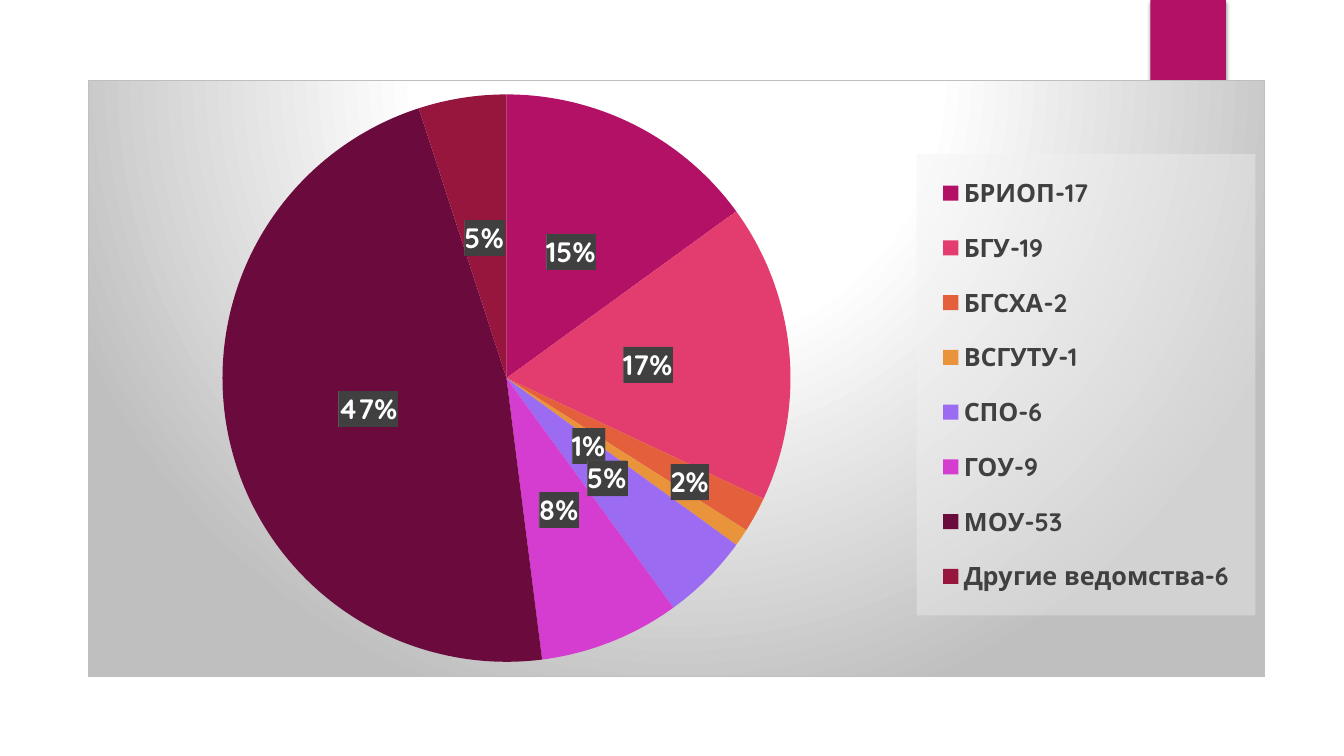
from copy import deepcopy

from pptx import Presentation
from pptx.chart.data import CategoryChartData
from pptx.dml.color import RGBColor
from pptx.enum.chart import XL_CHART_TYPE as Kind
from pptx.enum.chart import XL_LABEL_POSITION as Spot
from pptx.enum.chart import XL_LEGEND_POSITION as Side
from pptx.enum.shapes import MSO_SHAPE as Shape
from pptx.oxml import parse_xml
from pptx.oxml.ns import qn
from pptx.util import Inches, Pt

BLACK = RGBColor(0, 0, 0)
WHITE = RGBColor(0xFF, 0xFF, 0xFF)
GREY = RGBColor(0x40, 0x40, 0x40)
PINK = RGBColor(0xB3, 0x11, 0x66)
FONT = "Quicksand"
SLICES = [
    ("БРИОП-17", 15, PINK),
    ("БГУ-19", 17, RGBColor(0xE3, 0x3D, 0x6F)),
    ("БГСХА-2", 2, RGBColor(0xE4, 0x5F, 0x3C)),
    ("ВСГУТУ-1", 1, RGBColor(0xE9, 0x94, 0x3A)),
    ("СПО-6", 5, RGBColor(0x9B, 0x6B, 0xF2)),
    ("ГОУ-9", 8, RGBColor(0xD5, 0x3D, 0xD0)),
    ("МОУ-53", 47, RGBColor(0x6B, 0x0A, 0x3D)),
    ("Другие ведомства-6", 5, RGBColor(0x97, 0x16, 0x3D)),
]
MOVED = {2: (0.05, 0.06), 3: (-0.03, -0.02)}  # label shifts, share of chart


def node(tag, body):
    """Parse one chart or drawing element with its namespaces declared."""
    return parse_xml(
        f'<{tag} xmlns:c="http://schemas.openxmlformats.org/drawingml/2006/chart"'
        f' xmlns:a="http://schemas.openxmlformats.org/drawingml/2006/main">{body}</{tag}>'
    )


def layout(target="", **place):
    """Give a manual layout; x, y, w and h are shares of the chart."""
    inner = f'<c:layoutTarget val="{target}"/>' if target else ""
    if "w" in place:
        inner += '<c:xMode val="edge"/><c:yMode val="edge"/>'
    inner += "".join(f'<c:{key} val="{val}"/>' for key, val in place.items())
    return node("c:layout", f"<c:manualLayout>{inner}</c:manualLayout>")


deck = Presentation()
deck.slide_width, deck.slide_height = Inches(13.33), Inches(7.5)
slide = deck.slides.add_slide(deck.slide_layouts[6])

# Ribbon at the top edge
ribbon = slide.shapes.add_shape(
    Shape.RECTANGLE, Inches(11.41), Inches(0), Inches(0.75), Inches(1.25))
ribbon.fill.solid()
ribbon.fill.fore_color.rgb = PINK
ribbon.line.fill.background()
ribbon.shadow.inherit = False
shade = node(
    "a:outerShdw",
    '<a:srgbClr val="000000"><a:alpha val="45000"/></a:srgbClr>')
for key, val in {"blurRad": Pt(3), "dist": Pt(2), "dir": 90 * 60000}.items():
    shade.set(key, str(int(val)))
ribbon.element.spPr.find(qn("a:effectLst")).append(shade)

# Pie chart
data = CategoryChartData()
data.categories = [name for name, _, _ in SLICES]
data.add_series("Series 1", [share for _, share, _ in SLICES])
chart = slide.shapes.add_chart(
    Kind.PIE, Inches(0.87), Inches(0.79), Inches(11.68), Inches(5.93), data).chart
chart.has_title = False
chart.has_legend = True
legend = chart.legend
legend.position = Side.RIGHT
legend.include_in_layout = False
plot = chart.plots[0]
plot.vary_by_categories = True
series = plot.series[0]
for spot, (_, _, color) in enumerate(SLICES):
    point = series.points[spot].format
    point.fill.solid()
    point.fill.fore_color.rgb = color
    point.line.fill.background()

labels = series.data_labels
formats = {
    "show_percentage": True,
    "show_value": False,
    "number_format": "0%",
    "number_format_is_linked": False,
    "position": Spot.CENTER,
}
for key, val in formats.items():
    setattr(labels, key, val)

for font, size, bold, color in [
    (chart.font, 10, False, BLACK),
    (legend.font, 18, True, GREY),
    (labels.font, 20, True, WHITE),
]:
    for key, val in {"name": FONT, "size": Pt(size), "bold": bold}.items():
        setattr(font, key, val)
    font.color.rgb = color

# Backgrounds of chart, legend and labels
space = chart._chartSpace
space.find(qn("c:chart")).addnext(node("c:spPr", (
    '<a:gradFill><a:gsLst><a:gs pos="0"><a:srgbClr val="FFFFFF"/></a:gs>'
    '<a:gs pos="39000"><a:srgbClr val="FFFFFF"/></a:gs>'
    '<a:gs pos="100000"><a:srgbClr val="BFBFBF"/></a:gs></a:gsLst>'
    '<a:path path="circle"><a:fillToRect l="50000" t="-80000" r="50000" b="180000"/>'
    '</a:path></a:gradFill>'
    '<a:ln w="9525"><a:solidFill><a:srgbClr val="BFBFBF"/></a:solidFill></a:ln>')))
key_box = space.find(".//" + qn("c:legend"))
key_box.find(qn("c:overlay")).addnext(node("c:spPr", (
    '<a:solidFill><a:srgbClr val="F2F2F2"><a:alpha val="39000"/></a:srgbClr>'
    '</a:solidFill><a:ln><a:noFill/></a:ln>')))
tags = space.find(".//" + qn("c:ser")).find(qn("c:dLbls"))
tags.find(qn("c:numFmt")).addnext(node("c:spPr", (
    '<a:pattFill prst="dkVert"><a:fgClr><a:srgbClr val="404040"/></a:fgClr>'
    '<a:bgClr><a:srgbClr val="595959"/></a:bgClr></a:pattFill>'
    '<a:ln><a:noFill/></a:ln>')))

# Manual places of pie, legend and the two shifted labels
area = space.find(".//" + qn("c:plotArea"))
for box in (area, key_box):
    for old in box.findall(qn("c:layout")):
        box.remove(old)
area.insert(0, layout("inner", x=0.114, y=0.024, w=0.483, h=0.951))
key_box.find(qn("c:legendPos")).addnext(layout(x=0.704, y=0.124, w=0.288, h=0.773))

shared = [item for item in tags if item.tag != qn("c:showLeaderLines")]
for rank, (spot, (right, down)) in enumerate(MOVED.items()):
    tag = node("c:dLbl", f'<c:idx val="{spot}"/>')
    tag.append(layout(x=right, y=down))
    tag.extend([deepcopy(item) for item in shared])
    tags.insert(rank, tag)

deck.save("out.pptx")
